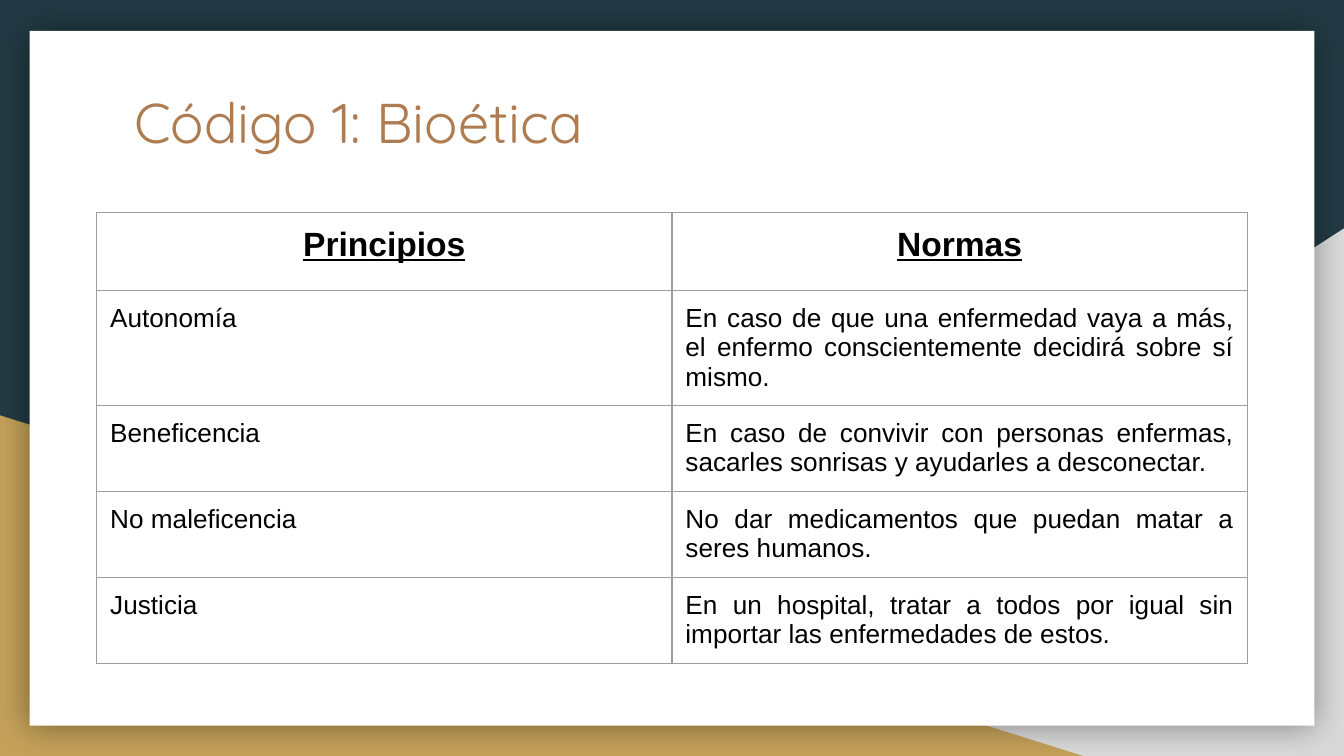
from typing import NamedTuple

from lxml import etree
from pptx import Presentation
from pptx.dml.color import RGBColor
from pptx.enum.shapes import MSO_SHAPE
from pptx.enum.text import MSO_ANCHOR, PP_ALIGN
from pptx.oxml import parse_xml
from pptx.oxml.ns import qn
from pptx.util import Inches, Pt

TRIANGLE, RECT = MSO_SHAPE.RIGHT_TRIANGLE, MSO_SHAPE.RECTANGLE
CENTER, JUSTIFY, LEFT = PP_ALIGN.CENTER, PP_ALIGN.JUSTIFY, PP_ALIGN.LEFT
TOP = MSO_ANCHOR.TOP
NS = "http://schemas.openxmlformats.org/drawingml/2006/main"
PAD = 0.1
WIDTH = 10
HEIGHT = WIDTH * 9 / 16


class Panel(NamedTuple):
    kind: MSO_SHAPE
    left: float
    top: float
    width: float
    height: float
    fill: str
    flip: bool = False
    shadow: bool = False


class Row(NamedTuple):
    height: float
    texts: tuple[str, str]


PANELS = [
    Panel(TRIANGLE, 3.92, 1.7, 6.08, HEIGHT - 1.7, "D9D9D9", flip=True),
    Panel(TRIANGLE, 0, 3.09, 8.06, HEIGHT - 3.09, "C4A15A"),
    Panel(RECT, 0.22, 0.23, 9.56, 5.17, "FFFFFF", shadow=True),
]
ROWS = [
    Row(0.58, ("Principios", "Normas")),
    Row(0.85, ("Autonomía", "En caso de que una enfermedad vaya a más, el enfermo "
                            "conscientemente decidirá sobre sí mismo.")),
    Row(0.64, ("Beneficencia", "En caso de convivir con personas enfermas, "
                               "sacarles sonrisas y ayudarles a desconectar.")),
    Row(0.64, ("No maleficencia", "No dar medicamentos que puedan matar a seres humanos.")),
    Row(0.64, ("Justicia", "En un hospital, tratar a todos por igual sin importar "
                           "las enfermedades de estos.")),
]


def color(code: str) -> RGBColor:
    return RGBColor.from_string(code)


def style(frame, font: str, size: float, code: str, align, strong: bool = False) -> None:
    for para in frame.paragraphs:
        para.alignment = align
        for run in para.runs:
            run.font.name = font
            run.font.size = Pt(size)
            run.font.color.rgb = color(code)
            run.font.bold = strong
            run.font.underline = strong


def pad(box) -> None:
    """Set equal margins on a cell or a text frame."""
    box.margin_left = box.margin_right = Inches(PAD)
    box.margin_top = box.margin_bottom = Inches(PAD)


def draw_panel(slide, panel: Panel) -> None:
    shape = slide.shapes.add_shape(
        panel.kind, Inches(panel.left), Inches(panel.top),
        Inches(panel.width), Inches(panel.height))
    shape.shadow.inherit = False
    shape.fill.solid()
    shape.fill.fore_color.rgb = color(panel.fill)
    shape.line.fill.background()
    props = shape.element.spPr
    if panel.flip:
        props.find(qn("a:xfrm")).set("flipH", "1")
    if panel.shadow:
        glow = parse_xml(
            f'<a:outerShdw xmlns:a="{NS}" blurRad="{Pt(18)}" dist="0" dir="0" '
            'algn="ctr" rotWithShape="0"><a:srgbClr val="000000">'
            '<a:alpha val="40000"/></a:srgbClr></a:outerShdw>')
        props.find(qn("a:effectLst")).append(glow)


def draw_title(slide, text: str) -> None:
    title = slide.shapes.title
    title.left, title.top = Inches(0.9), Inches(0.55)
    title.width, title.height = Inches(8.21), Inches(0.81)
    frame = title.text_frame
    frame.text = text
    frame.word_wrap = True
    frame.vertical_anchor = TOP
    pad(frame)
    style(frame, "Quicksand", 30, "AF7B51", LEFT)
    # The placeholder comes first in the tree; lift it above the panels.
    title.element.getparent().append(title.element)


def add_border(cell, code: str, width: float) -> None:
    props = cell._tc.get_or_add_tcPr()
    for place, side in enumerate(("lnL", "lnR", "lnT", "lnB")):
        line = etree.Element(qn(f"a:{side}"), w=str(Pt(width)))
        fill = etree.SubElement(line, qn("a:solidFill"))
        etree.SubElement(fill, qn("a:srgbClr"), val=code)
        props.insert(place, line)


def draw_table(slide, rows: list[Row]) -> None:
    wide = 4.28
    total = sum(row.height for row in rows)
    table = slide.shapes.add_table(
        len(rows), 2, Inches(0.72), Inches(1.58), Inches(2 * wide), Inches(total)).table
    table.first_row = table.horz_banding = False
    for column in table.columns:
        column.width = Inches(wide)
    for r, row in enumerate(rows):
        table.rows[r].height = Inches(row.height)
        head = r == 0
        for c, text in enumerate(row.texts):
            cell = table.cell(r, c)
            cell.text_frame.text = text
            cell.fill.background()
            cell.vertical_anchor = TOP
            pad(cell)
            style(cell.text_frame, "Arial", 18 if head else 14, "000000",
                  CENTER if head else JUSTIFY, head)
            add_border(cell, "9E9E9E", 0.75)


def main() -> None:
    deck = Presentation()
    deck.slide_width, deck.slide_height = Inches(WIDTH), Inches(HEIGHT)
    slide = deck.slides.add_slide(deck.slide_layouts[5])
    back = slide.background.fill
    back.solid()
    back.fore_color.rgb = color("233A44")
    for panel in PANELS:
        draw_panel(slide, panel)
    draw_title(slide, "Código 1: Bioética")
    draw_table(slide, ROWS)
    deck.save("out.pptx")


if __name__ == "__main__":
    main()
